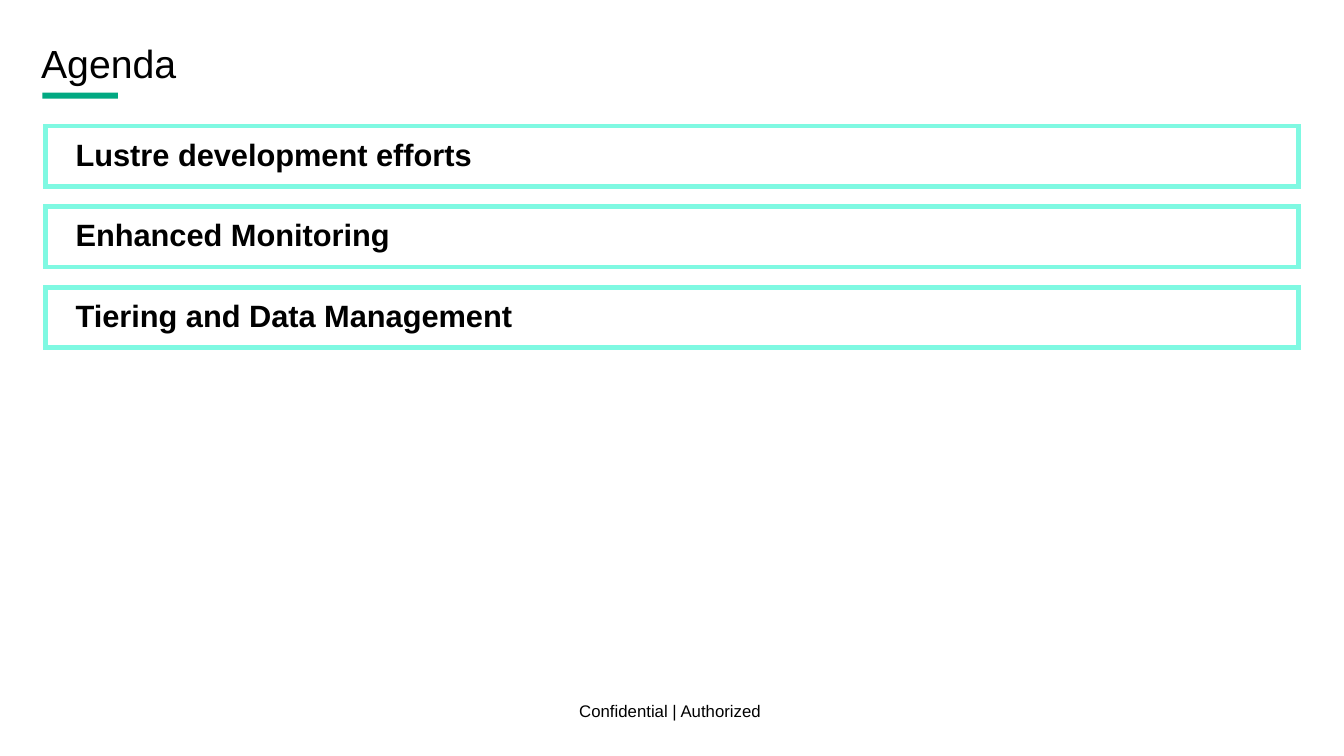
from dataclasses import dataclass

from lxml import etree
from pptx import Presentation
from pptx.dml.color import RGBColor
from pptx.enum.shapes import MSO_SHAPE
from pptx.enum.text import MSO_ANCHOR, PP_ALIGN
from pptx.oxml.ns import qn
from pptx.util import Inches, Pt

RECTANGLE = MSO_SHAPE.RECTANGLE
MIDDLE, BOTTOM = MSO_ANCHOR.MIDDLE, MSO_ANCHOR.BOTTOM
LEFT, CENTER = PP_ALIGN.LEFT, PP_ALIGN.CENTER

COLORS = {"green": "01A982", "mint": "7FF9E2", "text": "000000"}
FONT = "Arial"
CELL = Inches(0.05)  # side of one square grid cell

AGENDA = ["Lustre development efforts", "Enhanced Monitoring", "Tiering and Data Management"]
AGENDA_TOP, AGENDA_PITCH = 25, 16


@dataclass(frozen=True)
class Area:
    """A rectangle in grid columns and rows."""
    column: float
    row: float
    columns: float
    rows: float

    def lengths(self) -> list[int]:
        return [round(cells * CELL) for cells in (self.column, self.row, self.columns, self.rows)]


@dataclass(frozen=True)
class TextStyle:
    size: float
    bold: bool = False
    anchor: MSO_ANCHOR = MIDDLE
    align: PP_ALIGN = LEFT
    side_inset: float = 0.1
    end_inset: float = 0.1


TITLE = TextStyle(28)
AGENDA_ITEM = TextStyle(22, bold=True, side_inset=0.3)
FOOTER = TextStyle(12, anchor=BOTTOM, align=CENTER, end_inset=0)


def color(name: str) -> RGBColor:
    return RGBColor.from_string(COLORS[name])


def write_text(shape, text: str, style: TextStyle) -> None:
    frame = shape.text_frame
    frame.text = text
    frame.word_wrap = True
    frame.vertical_anchor = style.anchor
    frame.margin_left = frame.margin_right = Inches(style.side_inset)
    frame.margin_top = frame.margin_bottom = Inches(style.end_inset)
    paragraph = frame.paragraphs[0]
    paragraph.alignment = style.align
    paragraph.line_spacing = 0.9
    font = paragraph.runs[0].font
    font.name, font.size, font.bold = FONT, Pt(style.size), style.bold
    font.color.rgb = color("text")


def add_text(slide, area: Area, text: str, style: TextStyle) -> None:
    write_text(slide.shapes.add_textbox(*area.lengths()), text, style)


def add_title_underline(slide, area: Area) -> None:
    underline = slide.shapes.add_shape(RECTANGLE, *area.lengths())
    underline.shadow.inherit = False
    underline.fill.solid()
    underline.fill.fore_color.rgb = color("green")
    underline.line.fill.background()


def add_agenda_item(slide, area: Area, text: str) -> None:
    """Add an outlined row with square corners."""
    item = slide.shapes.add_shape(RECTANGLE, *area.lengths())
    item.shadow.inherit = False
    item.fill.background()
    item.line.color.rgb = color("mint")
    item.line.width = Pt(3.5)
    outline = item.element.spPr.find(qn("a:ln"))
    etree.SubElement(outline, qn("a:miter"), lim="800000")
    write_text(item, text, AGENDA_ITEM)


def main() -> None:
    presentation = Presentation()
    presentation.slide_width = Inches(13.33)
    presentation.slide_height = Inches(7.5)
    slide = presentation.slides.add_slide(presentation.slide_layouts[6])

    add_title_underline(slide, Area(8.4, 18.4, 15, 1.2))
    add_text(slide, Area(6.2, 8.6, 251.4, 8.8), "Agenda", TITLE)
    for index, text in enumerate(AGENDA):
        add_agenda_item(slide, Area(9, AGENDA_TOP + index * AGENDA_PITCH, 248.6, 12), text)
    add_text(slide, Area(67.6, 134, 131.6, 9), "Confidential | Authorized ", FOOTER)

    presentation.save("out.pptx")


if __name__ == "__main__":
    main()
